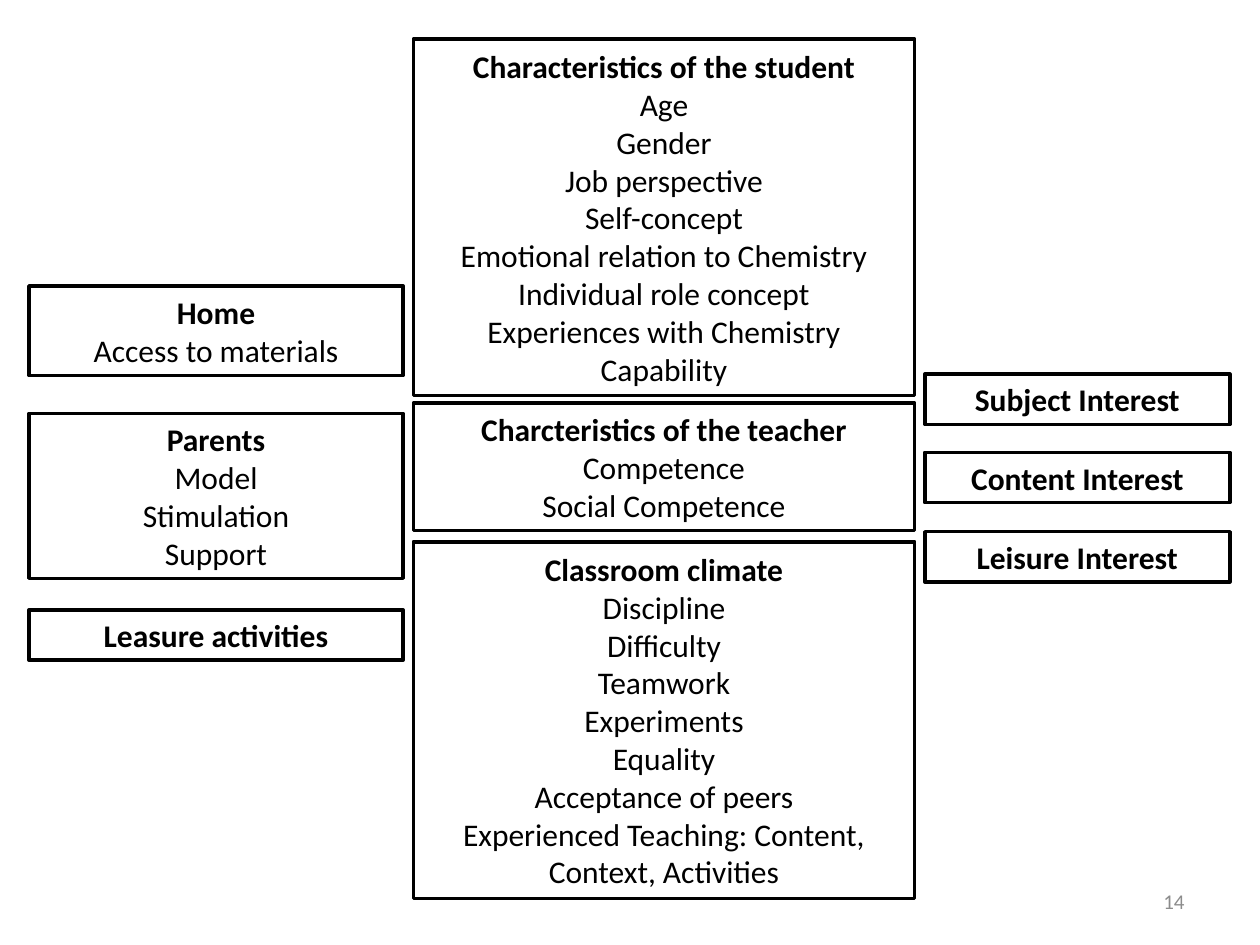
from pptx import Presentation
from pptx.dml.color import RGBColor
from pptx.enum.shapes import MSO_SHAPE
from pptx.enum.text import MSO_ANCHOR, MSO_AUTO_SIZE, PP_ALIGN
from pptx.util import Inches, Pt

BLACK = RGBColor(0x00, 0x00, 0x00)
WHITE = RGBColor(0xFF, 0xFF, 0xFF)
GRAY = RGBColor(0x8C, 0x8C, 0x8C)

COLUMNS = [
    (0.23, 2.97, [
        (2.27, 0.71, "Home", ["Access to materials"]),
        (3.28, 1.31, "Parents", ["Model", "Stimulation", "Support"]),
        (4.84, 0.4, "Leasure activities", []),
    ]),
    (3.28, 3.98, [
        (0.31, 2.83, "Characteristics of the student", [
            "Age", "Gender", "Job perspective", "Self-concept",
            "Emotional relation to Chemistry", "Individual role concept",
            "Experiences with Chemistry", "Capability"]),
        (3.2, 1.01, "Charcteristics of the teacher",
         ["Competence", "Social Competence"]),
        (4.3, 2.83, "Classroom climate", [
            "Discipline", "Difficulty", "Teamwork", "Experiments", "Equality",
            "Acceptance of peers",
            "Experienced Teaching: Content, Context, Activities"]),
    ]),
    (7.34, 2.42, [
        (2.97, 0.4, "Subject Interest", []),
        (3.59, 0.4, "Content Interest", []),
        (4.22, 0.4, "Leisure Interest", []),
    ]),
]


def write_paragraph(p, text, align, size, color, bold=False):
    """Fill a paragraph and format all its runs."""
    p.text = text
    p.alignment = align
    font_format = {"name": "Calibri", "size": Pt(size), "bold": bold}
    for r in p.runs:
        for name, value in font_format.items():
            setattr(r.font, name, value)
        r.font.color.rgb = color


def add_factor_box(s, left, top, width, height, heading, items):
    """Add an outlined box with a bold heading and its items below."""
    sp = s.shapes.add_shape(MSO_SHAPE.RECTANGLE, Inches(left), Inches(top),
                            Inches(width), Inches(height))
    sp.shadow.inherit = False
    sp.fill.solid()
    sp.fill.fore_color.rgb = WHITE
    sp.line.color.rgb = BLACK
    sp.line.width = Pt(2)
    tf = sp.text_frame
    frame_format = {"word_wrap": True, "vertical_anchor": MSO_ANCHOR.MIDDLE,
                    "auto_size": MSO_AUTO_SIZE.SHAPE_TO_FIT_TEXT}
    for name, value in frame_format.items():
        setattr(tf, name, value)
    write_paragraph(tf.paragraphs[0], heading, PP_ALIGN.CENTER, 18, BLACK, True)
    if items:
        write_paragraph(tf.add_paragraph(), "\v".join(items),
                        PP_ALIGN.CENTER, 18, BLACK)


def add_page_number(s, number):
    """Add the page number at the lower right."""
    sp = s.shapes.add_textbox(Inches(7.17), Inches(6.95),
                              Inches(2.33), Inches(0.4))
    tf = sp.text_frame
    tf.word_wrap = True
    tf.vertical_anchor = MSO_ANCHOR.MIDDLE
    write_paragraph(tf.paragraphs[0], number, PP_ALIGN.RIGHT, 12, GRAY)


def main():
    """Build the slide of factors around student interest."""
    prs = Presentation()
    prs.slide_width = Inches(10)
    prs.slide_height = Inches(7.5)
    s = prs.slides.add_slide(prs.slide_layouts[6])
    for left, width, boxes in COLUMNS:
        for top, height, heading, items in boxes:
            add_factor_box(s, left, top, width, height, heading, items)
    add_page_number(s, "14")
    prs.save("out.pptx")


if __name__ == "__main__":
    main()
